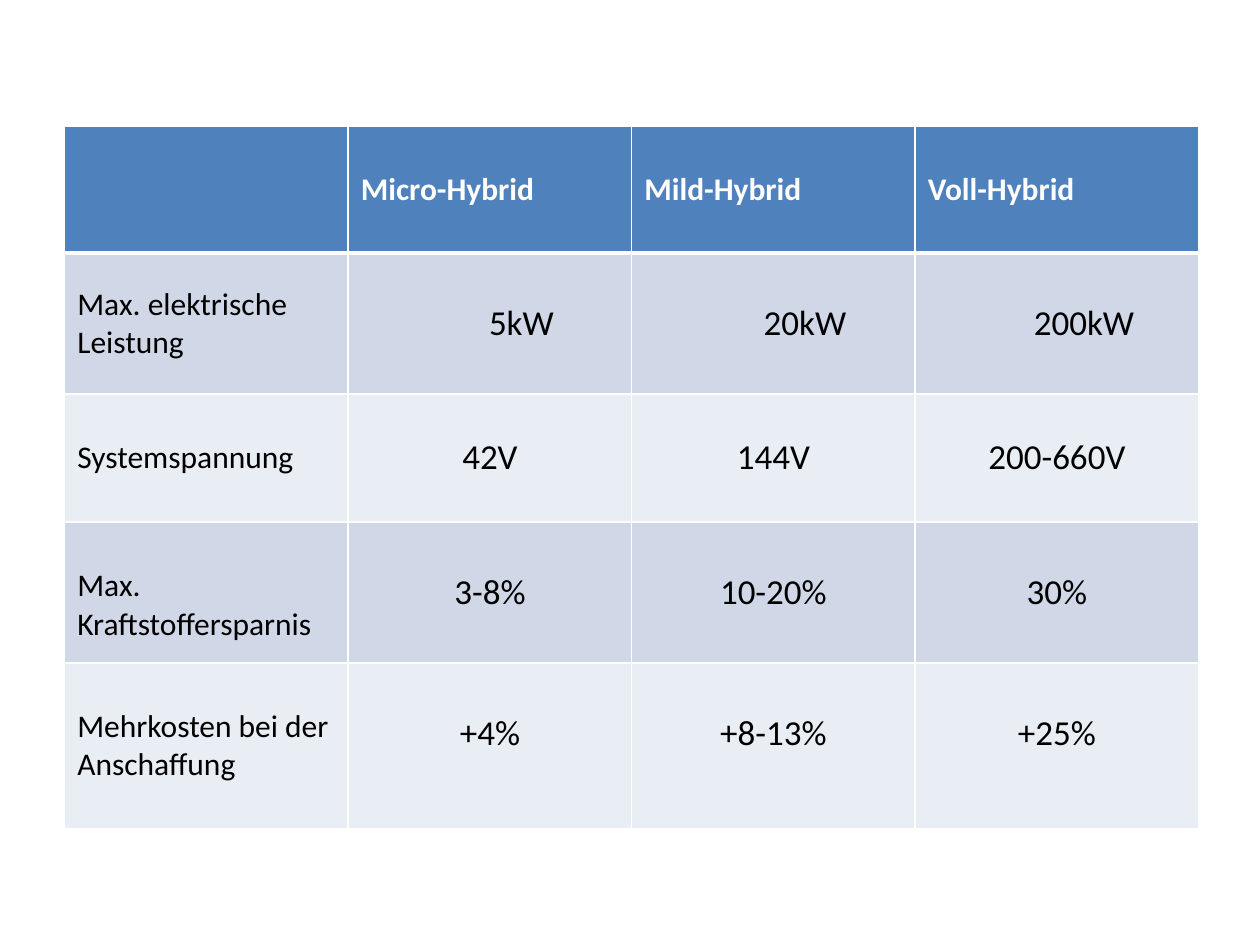
from lxml.etree import SubElement
from pptx import Presentation
from pptx.dml.color import RGBColor
from pptx.enum.text import MSO_ANCHOR, PP_ALIGN
from pptx.oxml.ns import qn
from pptx.util import Pt

WHITE, BLACK, BLUE = "FFFFFF", "000000", "4F81BD"
BANDS = ["D0D8E8", "E9EDF4"]
COLUMN_WIDTH = 162
ROW_HEIGHTS = [72.6, 80.5, 73.2, 80.5, 95]
POWER_INDENTS = [0, 36, 36, 31]
FIRST_TOP_ALIGNED_ROW = 3
ROWS = [
    ["", "Micro-Hybrid", "Mild-Hybrid", "Voll-Hybrid"],
    ["Max. elektrische Leistung", "5kW", "20kW", "200kW"],
    ["Systemspannung", "42V", "144V", "200-660V"],
    ["Max. Kraftstoffersparnis", "3-8%", "10-20%", "30%"],
    ["Mehrkosten bei der Anschaffung", "+4%", "+8-13%", "+25%"],
]


def color(value):
    return RGBColor.from_string(value)


def add_border(cell, side, width):
    line = SubElement(cell._tc.get_or_add_tcPr(), qn(f"a:ln{side}"), w=str(Pt(width)))
    fill = SubElement(line, qn("a:solidFill"))
    SubElement(fill, qn("a:srgbClr"), val=WHITE)


def style_cell(cell, row, column):
    header_edge = {"T": 1, "B": 0}
    for side in "LRTB":
        add_border(cell, side, 3 if header_edge.get(side) == row else 1)
    cell.fill.solid()
    cell.fill.fore_color.rgb = color(BANDS[(row - 1) % 2] if row else BLUE)


def write_cell(cell, text, row, column):
    is_value = row > 0 and column > 0
    size = 20 if is_value else 18
    cell.vertical_anchor = MSO_ANCHOR.MIDDLE
    if row >= FIRST_TOP_ALIGNED_ROW:
        cell.vertical_anchor = MSO_ANCHOR.TOP
        cell.margin_top = Pt(3.6 + 1.22 * size)
    if row == 1:
        cell.margin_left = Pt(7.2 + POWER_INDENTS[column])
    cell.text_frame.text = text
    paragraph = cell.text_frame.paragraphs[0]
    paragraph.alignment = PP_ALIGN.CENTER if is_value else PP_ALIGN.LEFT
    for run in paragraph.runs:
        run.font.name = "Calibri"
        run.font.size = Pt(size)
        run.font.bold = row == 0
        run.font.color.rgb = color(BLACK if row else WHITE)


def add_hybrid_table(slide):
    columns = len(ROWS[0])
    shape = slide.shapes.add_table(
        len(ROWS), columns, Pt(37), Pt(72),
        Pt(columns * COLUMN_WIDTH), Pt(sum(ROW_HEIGHTS)),
    )
    table = shape.table
    for column in table.columns:
        column.width = Pt(COLUMN_WIDTH)
    for row, texts in enumerate(ROWS):
        table.rows[row].height = Pt(ROW_HEIGHTS[row])
        for column, text in enumerate(texts):
            cell = table.cell(row, column)
            style_cell(cell, row, column)
            write_cell(cell, text, row, column)


def main():
    presentation = Presentation()
    presentation.slide_width = Pt(720)
    presentation.slide_height = Pt(540)
    slide = presentation.slides.add_slide(presentation.slide_layouts[6])
    add_hybrid_table(slide)
    presentation.save("out.pptx")


if __name__ == "__main__":
    main()
